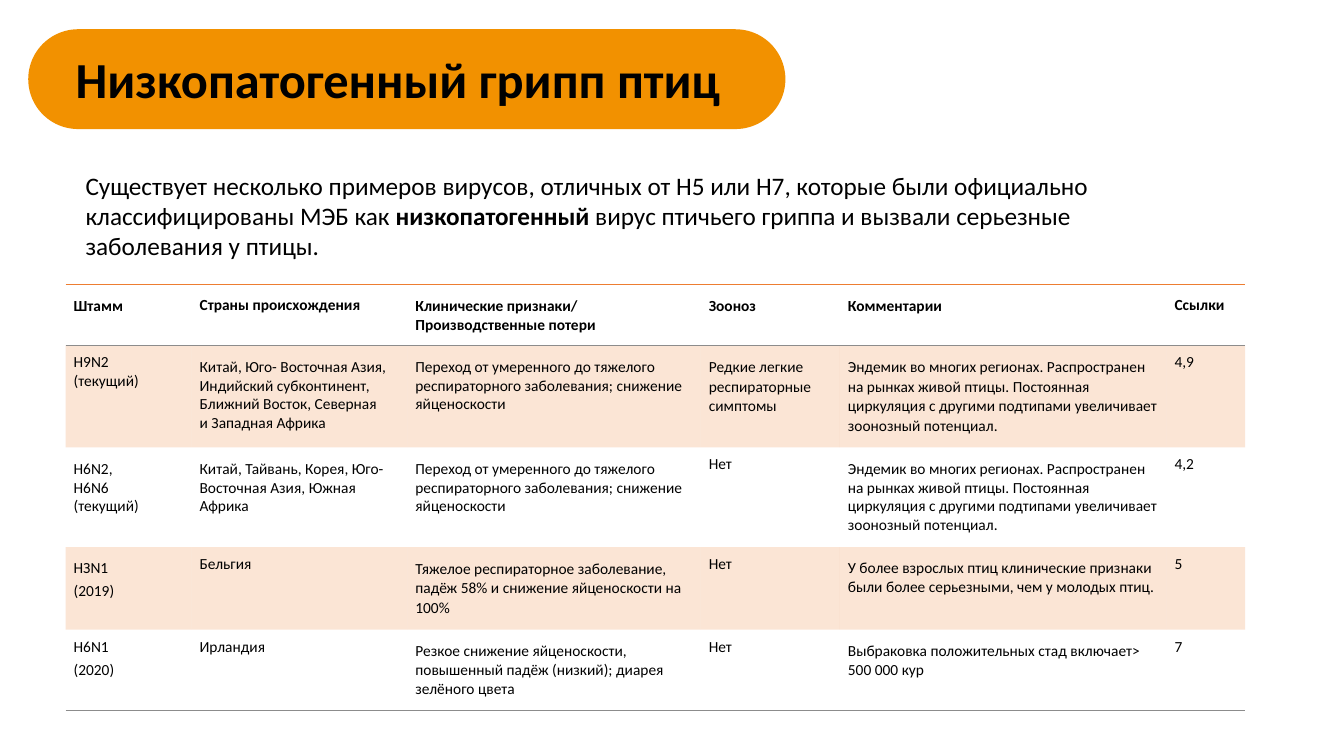
from dataclasses import dataclass

from lxml.etree import SubElement
from pptx import Presentation
from pptx.dml.color import RGBColor
from pptx.enum.shapes import MSO_SHAPE as Shape
from pptx.enum.text import MSO_ANCHOR as Anchor, MSO_AUTO_SIZE as AutoSize, PP_ALIGN as Align
from pptx.oxml import parse_xml
from pptx.oxml.ns import nsdecls, qn
from pptx.util import Inches, Pt

PILL_ORANGE, TABLE_ORANGE, RULE_GREY, BLACK = "F29100", "ED7D31", "8C8C8C", "000000"
NO_STYLE = "{2D5ABB26-0587-4C30-8999-92F81FD0307C}"


@dataclass
class Para:
    text: str
    line: float = 0
    before: float = 0
    after: float = 0


def color(value):
    return RGBColor.from_string(value)


def tight(text):
    return Para(text, 10.5)


def loose(text):
    return Para(text, 13.5)


def airy(text):
    return Para(text, 13.9)


class SlideBuilder:
    font = "Calibri"

    def __init__(self, deck):
        self.slide = deck.slides.add_slide(deck.slide_layouts[5])

    def run(self, paragraph, text, size, bold=False):
        run = paragraph.add_run()
        run.text = text
        run.font.name, run.font.size, run.font.bold = self.font, Pt(size), bold
        run.font.color.rgb = color(BLACK)

    def pill(self, left, top, width, height):
        pill = self.slide.shapes.add_shape(Shape.ROUNDED_RECTANGLE, *map(Inches, (left, top, width, height)))
        pill.adjustments[0] = 0.5
        pill.shadow.inherit = False
        pill.fill.solid()
        pill.fill.fore_color.rgb = color(PILL_ORANGE)
        pill.line.fill.background()
        return pill

    def title(self, text, left, top, width, height, backdrop):
        """Place the title directly above its backdrop."""
        title = self.slide.shapes.title
        title.left, title.top, title.width, title.height = map(Inches, (left, top, width, height))
        frame = title.text_frame
        frame.word_wrap = True
        frame.auto_size = AutoSize.SHAPE_TO_FIT_TEXT
        frame.vertical_anchor = Anchor.TOP
        frame.paragraphs[0].alignment = Align.LEFT
        self.run(frame.paragraphs[0], text, 36, True)
        backdrop.element.addnext(title.element)

    def text(self, runs, left, top, width, height):
        box = self.slide.shapes.add_textbox(*map(Inches, (left, top, width, height)))
        frame = box.text_frame
        frame.word_wrap = True
        frame.auto_size = AutoSize.SHAPE_TO_FIT_TEXT
        for text, bold in runs:
            self.run(frame.paragraphs[0], text, 18, bold)

    def cell(self, cell, paras, bold, shaded, borders):
        cell.margin_left = cell.margin_right = Inches(0.08)
        cell.margin_top = cell.margin_bottom = Inches(0.12)
        cell.vertical_anchor = Anchor.TOP
        frame = cell.text_frame
        for i, para in enumerate(paras):
            paragraph = frame.add_paragraph() if i else frame.paragraphs[0]
            if para.line:
                paragraph.line_spacing = Pt(para.line)
            if para.before:
                paragraph.space_before = Pt(para.before)
            if para.after:
                paragraph.space_after = Pt(para.after)
            for j, text in enumerate(para.text.split("\n")):
                if j:
                    paragraph.add_line_break()
                self.run(paragraph, text, 11, bold)
        properties = cell.fill
        if shaded:
            properties.solid()
            properties.fore_color.rgb = color(TABLE_ORANGE)
        else:
            properties.background()
        tc_pr = cell._tc.get_or_add_tcPr()
        for srgb in tc_pr.iter(qn("a:srgbClr")):
            SubElement(srgb, qn("a:alpha")).set("val", "20000")
        for position, (side, shade) in enumerate(borders):
            tc_pr.insert(position, parse_xml(
                f'<a:ln{side} {nsdecls("a")} w="12700"><a:solidFill>'
                f'<a:srgbClr val="{shade}"/></a:solidFill></a:ln{side}>'))

    def table(self, rows, widths, heights, left, top):
        frame = self.slide.shapes.add_table(
            len(rows), len(widths), *map(Inches, (left, top, sum(widths), sum(heights))))
        table = frame.table
        table.first_row = table.horz_banding = False
        table._tbl.tblPr.find(qn("a:tableStyleId")).text = NO_STYLE
        for column, width in zip(table.columns, widths):
            column.width = Inches(width)
        for r, (row, height) in enumerate(zip(rows, heights)):
            table.rows[r].height = Inches(height)
            borders = [("T", TABLE_ORANGE)] if r == 0 else []
            if r in (0, len(rows) - 1):
                borders.append(("B", RULE_GREY))
            for c, paras in enumerate(row):
                self.cell(table.cell(r, c), paras, r == 0, r % 2 == 1, borders)


RESPIRATORY = loose("Переход от умеренного до тяжелого респираторного заболевания; снижение яйценоскости")
ENDEMIC = ("Эндемик во многих регионах. Распространен на рынках живой птицы. Постоянная циркуляция "
           "с другими подтипами увеличивает зоонозный потенциал.")
NO_ZOONOSIS = [tight("Нет")]

STRAINS = [
    [[Para("Штамм")], [Para("Страны происхождения", 13, after=6)],
     [Para("Клинические признаки/ Производственные потери")], [Para("Зооноз")],
     [Para("Комментарии")], [Para("Ссылки", 13)]],
    [[Para("Н9N2", 10.5, after=3), Para("(текущий)", 10.5, after=3)],
     [loose("Китай, Юго- Восточная Азия, Индийский субконтинент, Ближний Восток, Северная\nи Западная Африка")],
     [RESPIRATORY], [airy("Редкие легкие респираторные симптомы")], [airy(ENDEMIC)], [tight("4,9")]],
    [[loose("Н6N2,"), loose("Н6N6"), loose("(текущий)")],
     [loose("Китай, Тайвань, Корея, Юго- Восточная Азия, Южная Африка")],
     [RESPIRATORY], NO_ZOONOSIS, [loose(ENDEMIC)], [tight("4,2")]],
    [[Para("НЗN1", 13, after=3), Para("(2019)", 10.5, before=3)], [tight("Бельгия")],
     [airy("Тяжелое респираторное заболевание, падёж 58% и снижение яйценоскости на 100%")], NO_ZOONOSIS,
     [loose("У более взрослых птиц клинические признаки были более серьезными, чем у молодых птиц.")],
     [tight("5")]],
    [[Para("Н6N1", 10.5, after=3), Para("(2020)", 10.5, before=3)], [tight("Ирландия")],
     [loose("Резкое снижение яйценоскости, повышенный падёж (низкий); диарея зелёного цвета")], NO_ZOONOSIS,
     [loose("Выбраковка положительных стад включает> 500 000 кур")], [tight("7")]],
]


def main():
    deck = Presentation()
    deck.slide_width, deck.slide_height = Inches(13.33), Inches(7.5)
    builder = SlideBuilder(deck)
    pill = builder.pill(0.28, 0.29, 7.51, 0.99)
    builder.title("Низкопатогенный грипп птиц", 0.65, 0.43, 6.83, 0.71, pill)
    builder.text([
        ("Существует несколько примеров вирусов, отличных от H5 или H7, которые были официально "
         "классифицированы МЭБ как ", False),
        ("низкопатогенный", True),
        (" вирус птичьего гриппа и вызвали серьезные заболевания у птицы.", False),
    ], 0.75, 1.64, 11.3, 1.01)
    builder.table(STRAINS, [1.25, 2.14, 2.91, 1.38, 3.24, 0.78], [0.6, 0.67, 0.59, 0.59, 0.74], 0.65, 2.82)
    deck.save("out.pptx")


if __name__ == "__main__":
    main()
